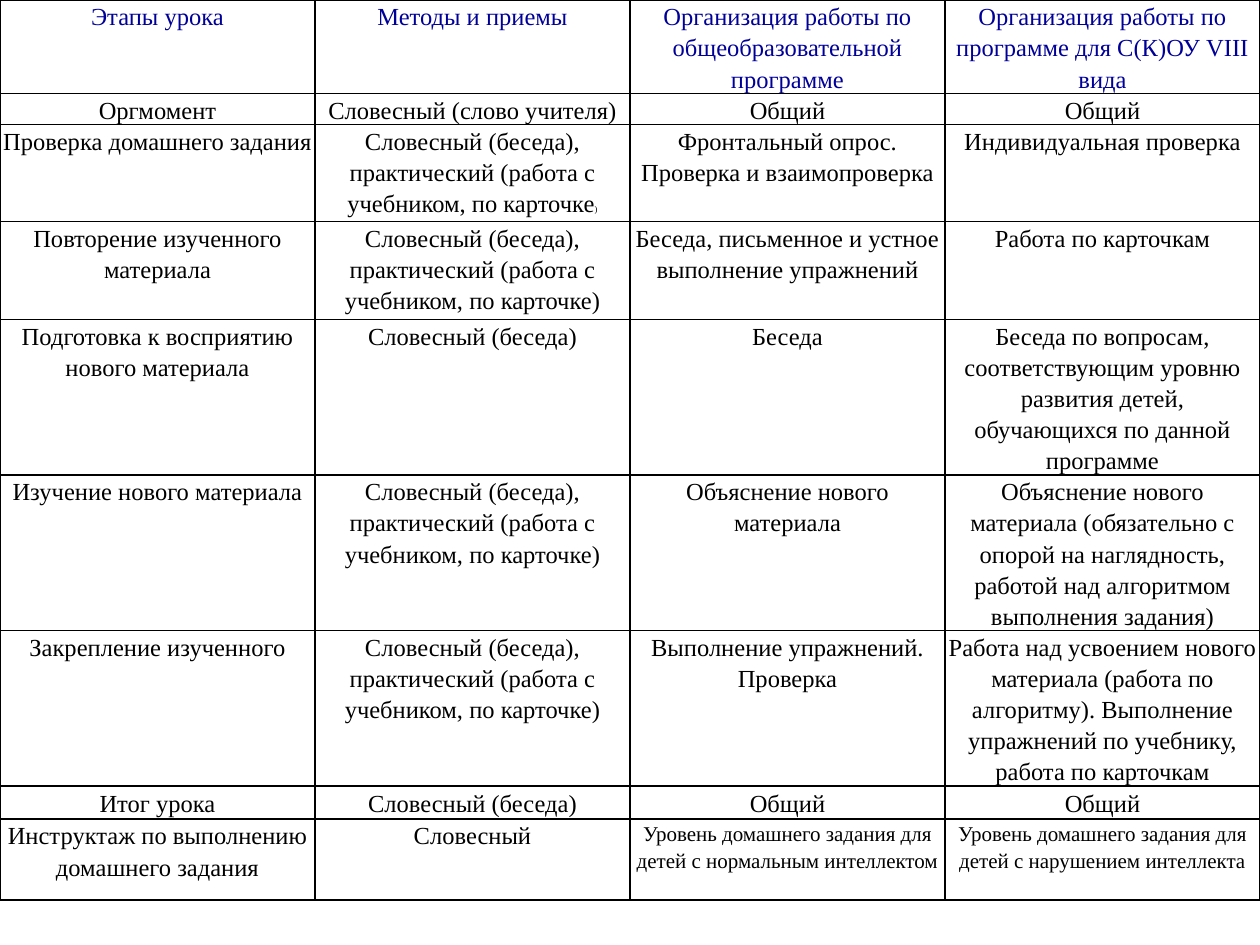
from lxml import etree
from pptx import Presentation
from pptx.dml.color import RGBColor
from pptx.enum import text
from pptx.oxml import ns
from pptx.util import Inches, Pt

PPI = 126


def px(n):
    return Inches(n / PPI)


def color(code):
    return RGBColor.from_string(code)


class Page:
    face = "Times New Roman"
    size = 14
    ink = "000000"
    accent = "000099"
    edge = 1
    inset = 2

    def __init__(self, slide):
        self.slide = slide

    def font(self, run, size, code):
        run.font.name = self.face
        run.font.size = Pt(size)
        run.font.color.rgb = color(code)

    def border(self, cell):
        props = cell._tc.get_or_add_tcPr()
        for side in ("lnL", "lnR", "lnT", "lnB"):
            line = etree.SubElement(props, ns.qn("a:" + side), w=str(Pt(self.edge)))
            fill = etree.SubElement(line, ns.qn("a:solidFill"))
            etree.SubElement(fill, ns.qn("a:srgbClr"), val=self.ink)

    def cell(self, cell, words, size, code):
        cell.margin_left = cell.margin_right = px(self.inset)
        cell.margin_top = cell.margin_bottom = 0
        self.border(cell)
        cell.fill.background()
        cell.text_frame.text = words
        para = cell.text_frame.paragraphs[0]
        para.alignment = text.PP_ALIGN.CENTER
        para.line_spacing = 1.15
        para.space_after = Pt(10)
        self.font(para.runs[0], size, code)

    def tail(self, cell, words, size):
        run = cell.text_frame.paragraphs[0].add_run()
        run.text = words
        self.font(run, size, self.ink)

    def table(self, rows, highs, width, height, sizes):
        frame = self.slide.shapes.add_table(
            len(rows), len(rows[0]), 0, 0, px(width), px(height))
        grid = frame.table
        grid.first_row = grid.horz_banding = False
        for r, (row, high) in enumerate(zip(rows, highs)):
            grid.rows[r].height = px(high)
            code = self.ink if r else self.accent
            for c, words in enumerate(row):
                self.cell(grid.cell(r, c), words, sizes.get((r, c), self.size), code)
        frame.height = px(height)
        return grid


# Lesson plan: stage, methods, general programme, special programme
BOOK = "Словесный (беседа), практический (работа с учебником, по карточке"
TALK = "Словесный (беседа)"
ALL = "Общий"
HOME = "Уровень домашнего задания для детей с "
ROWS = [
    ("Этапы урока", "Методы и приемы",
     "Организация работы по общеобразовательной программе",
     "Организация работы по программе для С(К)ОУ VIII вида"),
    ("Оргмомент", "Словесный (слово учителя)", ALL, ALL),
    ("Проверка домашнего задания", BOOK,
     "Фронтальный опрос. Проверка и взаимопроверка",
     "Индивидуальная проверка"),
    ("Повторение изученного материала", BOOK + ")",
     "Беседа, письменное и устное выполнение упражнений",
     "Работа по карточкам"),
    ("Подготовка к восприятию нового материала", TALK, "Беседа",
     "Беседа по вопросам, соответствующим уровню развития детей, "
     "обучающихся по данной программе"),
    ("Изучение нового материала", BOOK + ")", "Объяснение нового материала",
     "Объяснение нового материала (обязательно с опорой на наглядность, "
     "работой над алгоритмом выполнения задания)"),
    ("Закрепление изученного", BOOK + ")", "Выполнение упражнений. Проверка",
     "Работа над усвоением нового материала (работа по алгоритму). "
     "Выполнение упражнений по учебнику, работа по карточкам"),
    ("Итог урока", TALK, ALL, ALL),
    ("Инструктаж по выполнению домашнего задания", "Словесный",
     HOME + "нормальным интеллектом", HOME + "нарушением интеллекта"),
]
HIGHS = [66, 30, 97, 98, 130, 146, 130, 33, 81]


def main():
    deck = Presentation()
    deck.slide_width, deck.slide_height = px(1260), px(945)
    page = Page(deck.slides.add_slide(deck.slide_layouts[6]))

    # Table, with smaller text in the homework cells
    grid = page.table(ROWS, HIGHS, 1260, 960, {(8, 2): 12, (8, 3): 12})

    # Small closing bracket
    page.tail(grid.cell(2, 1), ")", 5)

    deck.save("out.pptx")


if __name__ == "__main__":
    main()
